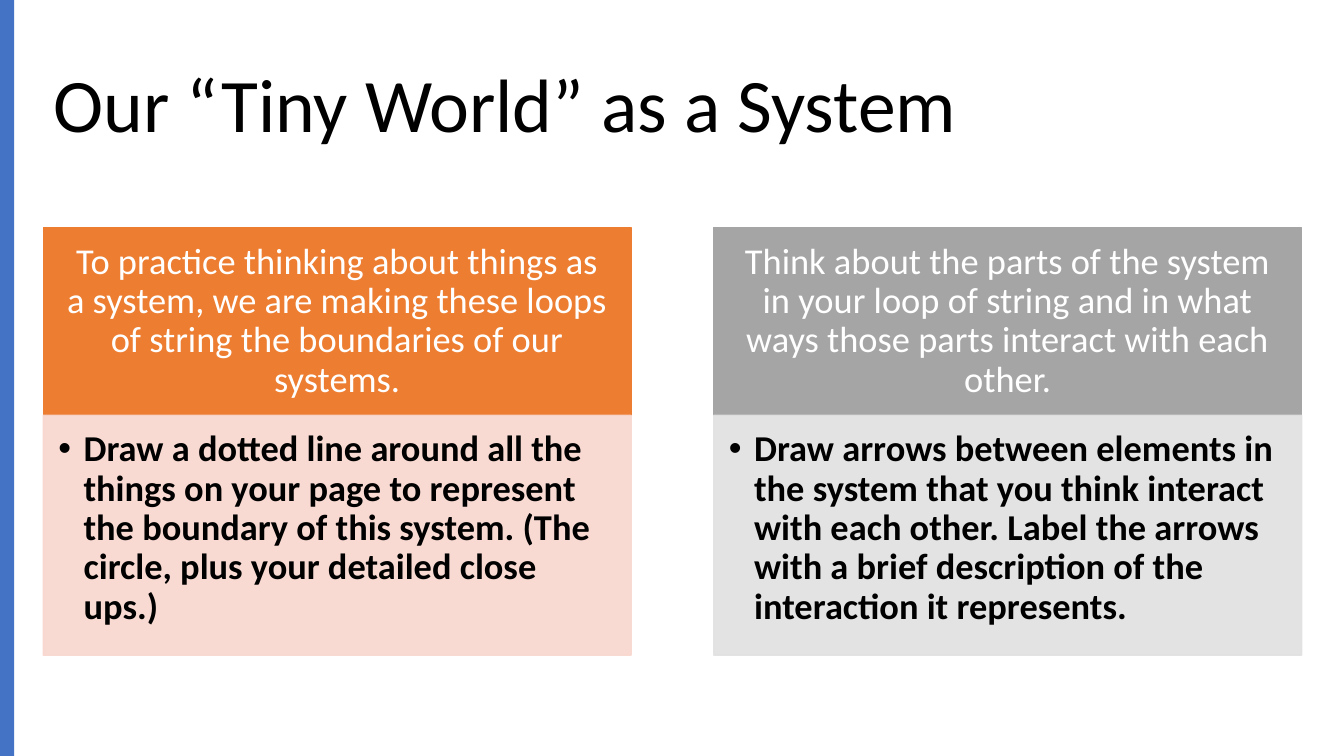
from lxml import etree
from pptx import Presentation
from pptx.dml.color import RGBColor
from pptx.enum.shapes import MSO_SHAPE
from pptx.enum.text import MSO_ANCHOR, MSO_AUTO_SIZE, PP_ALIGN
from pptx.oxml.ns import qn
from pptx.util import Inches, Pt

RECTANGLE = MSO_SHAPE.RECTANGLE
TOP, MIDDLE = MSO_ANCHOR.TOP, MSO_ANCHOR.MIDDLE
LEFT, CENTER = PP_ALIGN.LEFT, PP_ALIGN.CENTER
NO_FIT = MSO_AUTO_SIZE.NONE

BLACK = RGBColor(0x00, 0x00, 0x00)
WHITE = RGBColor(0xFF, 0xFF, 0xFF)
BLUE = RGBColor(0x44, 0x72, 0xC4)
ORANGE = RGBColor(0xED, 0x7D, 0x31)
PALE_ORANGE = RGBColor(0xF8, 0xD7, 0xCE)
GRAY = RGBColor(0xA5, 0xA5, 0xA5)
PALE_GRAY = RGBColor(0xE1, 0xE1, 0xE1)

SLIDE_WIDTH, SLIDE_HEIGHT = 13.33, 7.5
MARGIN = 0.43
CONTENT_WIDTH = 12.48
COLUMN_WIDTH = 5.83
COLUMN_STEP = CONTENT_WIDTH - COLUMN_WIDTH
HEADING_TOP, HEADING_HEIGHT = 2.26, 1.86
TASK_TOP, TASK_HEIGHT = HEADING_TOP + HEADING_HEIGHT, 2.38

COLUMNS = [
    (ORANGE, PALE_ORANGE,
     "To practice thinking about things as a system, we are making these "
     "loops of string the boundaries of our systems.",
     "Draw a dotted line around all the things on your page to represent the "
     "boundary of this system. (The circle, plus your detailed close ups.)"),
    (GRAY, PALE_GRAY,
     "Think about the parts of the system in your loop of string and in what "
     "ways those parts interact with each other.",
     "Draw arrows between elements in the system that you think interact with "
     "each other. Label the arrows with a brief description of the "
     "interaction it represents."),
]


class Page:
    font_name = "Calibri"
    text_size = 26
    title_size = 54
    line_spacing = 0.9
    bullet_indent = 0.25

    def __init__(self, deck):
        self.slide = deck.slides.add_slide(deck.slide_layouts[5])

    def set_text(self, box, text, *, size=text_size, color=BLACK, bold=False,
                 align=LEFT, anchor=MIDDLE, insets=(0.1, 0.05, 0.1, 0.05),
                 bullet=False):
        """Fill a box with one paragraph; insets run left, top, right, bottom."""
        frame = box.text_frame
        frame.word_wrap = True
        frame.auto_size = NO_FIT
        frame.vertical_anchor = anchor
        (frame.margin_left, frame.margin_top,
         frame.margin_right, frame.margin_bottom) = map(Inches, insets)
        para = frame.paragraphs[0]
        para.alignment = align
        para.line_spacing = self.line_spacing
        if bullet:
            self.add_bullet(para)
        span = para.add_run()
        span.text = text
        span.font.name = self.font_name
        span.font.size = Pt(size)
        span.font.bold = bold
        span.font.color.rgb = color

    def add_bullet(self, para):
        properties = para._p.get_or_add_pPr()
        indent = Inches(self.bullet_indent)
        properties.set("marL", str(indent))
        properties.set("indent", str(-indent))
        etree.SubElement(properties, qn("a:buFont")).set("typeface", "Arial")
        etree.SubElement(properties, qn("a:buChar")).set("char", "•")

    def title(self, text):
        box = self.slide.shapes.title
        box.left, box.top = Inches(MARGIN), Inches(0.35)
        box.width, box.height = Inches(CONTENT_WIDTH), Inches(1.45)
        self.set_text(box, text, size=self.title_size)

    def panel(self, left, top, width, height, color, outlined=True, opacity=100):
        box = self.slide.shapes.add_shape(
            RECTANGLE, *map(Inches, (left, top, width, height)))
        box.shadow.inherit = False
        box.fill.solid()
        box.fill.fore_color.rgb = color
        if outlined:
            box.line.color.rgb = color
            box.line.width = Pt(1)
        else:
            box.line.fill.background()
        if opacity < 100:
            for tint in box._element.spPr.iter(qn("a:srgbClr")):
                etree.SubElement(tint, qn("a:alpha")).set("val", str(opacity * 1000))
        return box

    def column(self, left, color, pale_color, heading, task):
        """Place a coloured heading above a pale panel with a bulleted task."""
        box = self.panel(left, HEADING_TOP, COLUMN_WIDTH, HEADING_HEIGHT, color)
        self.set_text(box, heading, color=WHITE, align=CENTER,
                      insets=(0.2, 0.12, 0.2, 0.12))
        box = self.panel(left, TASK_TOP, COLUMN_WIDTH, TASK_HEIGHT, pale_color,
                         opacity=90)
        self.set_text(box, task, bold=True, anchor=TOP, bullet=True,
                      insets=(0.15, 0.15, 0.2, 0.23))


def main():
    deck = Presentation()
    deck.slide_width = Inches(SLIDE_WIDTH)
    deck.slide_height = Inches(SLIDE_HEIGHT)
    page = Page(deck)
    page.title("Our “Tiny World” as a System")
    page.panel(0, 0, 0.14, SLIDE_HEIGHT, BLUE, outlined=False)
    for index, content in enumerate(COLUMNS):
        page.column(MARGIN + index * COLUMN_STEP, *content)
    deck.save("out.pptx")


if __name__ == "__main__":
    main()
